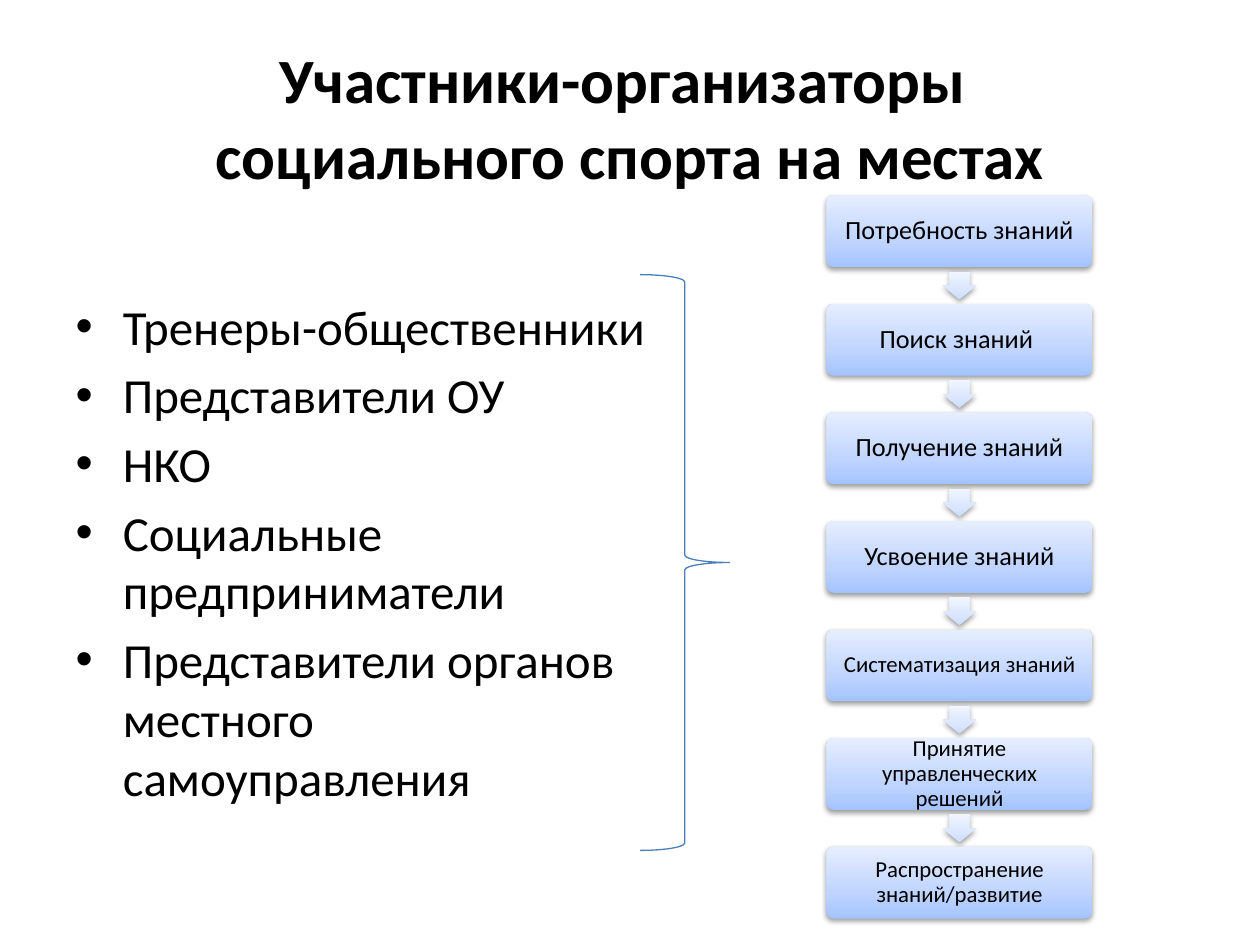
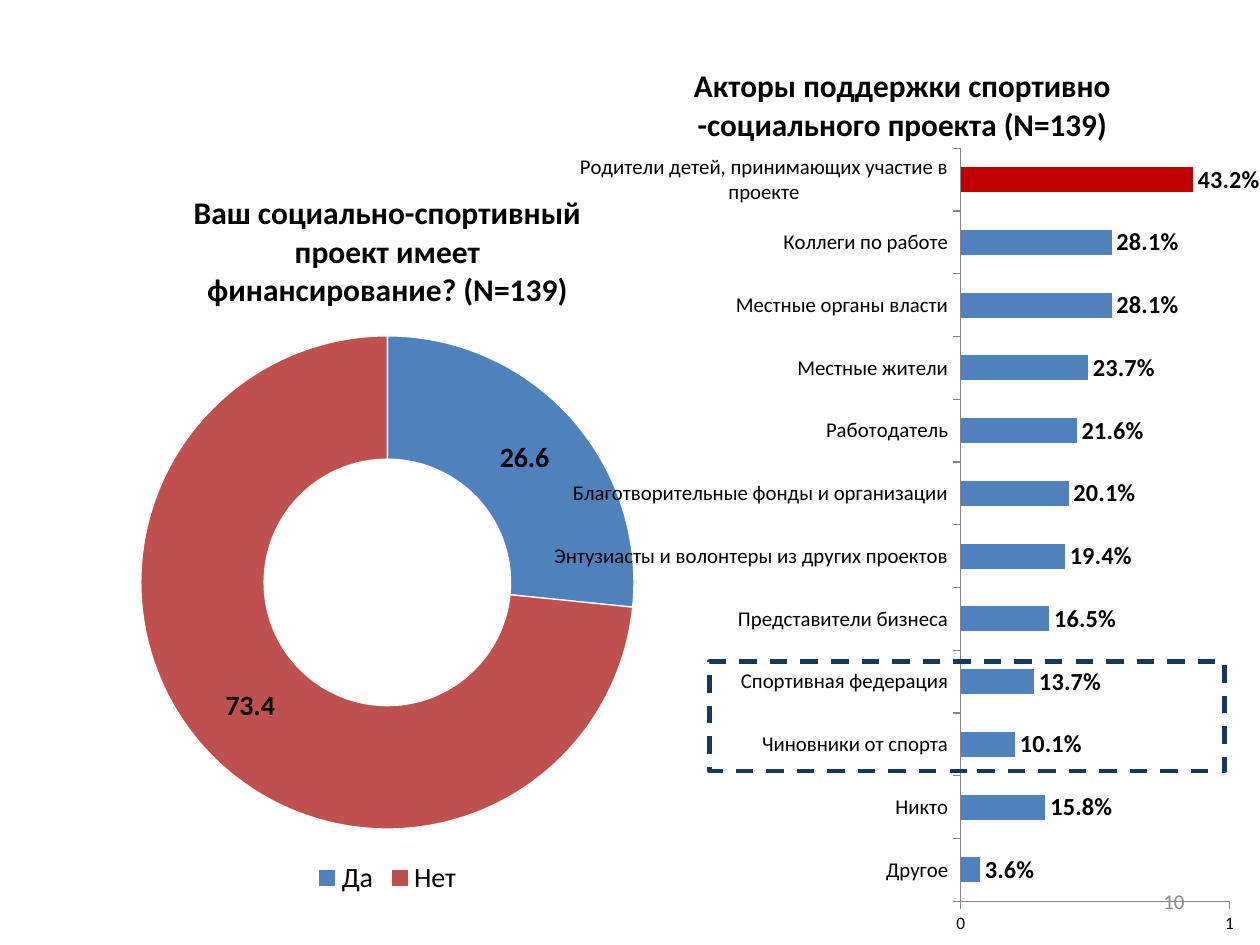
from dataclasses import dataclass

from lxml.etree import SubElement
from pptx import Presentation
from pptx.chart.data import CategoryChartData
from pptx.dml.color import RGBColor
from pptx.enum.chart import XL_CHART_TYPE, XL_LABEL_POSITION, XL_LEGEND_POSITION, XL_TICK_MARK
from pptx.enum.dml import MSO_LINE
from pptx.enum.shapes import MSO_SHAPE
from pptx.enum.text import MSO_ANCHOR, MSO_AUTO_SIZE, PP_ALIGN
from pptx.oxml.ns import qn
from pptx.util import Inches, Pt


@dataclass(frozen=True)
class Theme:
    font: str = "Calibri"
    text: str = "000000"
    muted: str = "8C8C8C"
    axis: str = "868686"
    paper: str = "FFFFFF"
    blue: str = "4F81BD"
    red: str = "C0504D"
    accent: str = "C00000"
    brace: str = "4B7EBC"
    frame: str = "17375E"
    step_fill: tuple = ((0, "A4C4FF"), (35, "BFD4FF"), (100, "E6EEFF"))
    arrow_fill: tuple = ((0, "CDDDFE"), (35, "DBE6FE"), (100, "F0F5FF"))
    title_size: int = 36
    body_size: int = 28
    chart_title_size: int = 18
    legend_size: int = 16
    step_size: int = 15
    long_step_size: int = 13
    label_size: int = 14
    small_size: int = 12
    axis_size: int = 10


THEME = Theme()

PARTICIPANTS = [
    "Тренеры-общественники",
    "Представители ОУ",
    "НКО",
    "Социальные предприниматели",
    "Представители органов местного самоуправления",
]
STEPS = [
    "Потребность знаний",
    "Поиск знаний ",
    "Получение знаний",
    "Усвоение знаний",
    "Систематизация знаний",
    "Принятие управленческих решений",
    "Распространение знаний/развитие",
]
FUNDING = {"Да": 26.6, "Нет": 73.4}
SUPPORTERS = {
    "Другое": 0.036,
    "Никто": 0.158,
    "Чиновники от спорта": 0.101,
    "Спортивная федерация": 0.137,
    "Представители бизнеса": 0.165,
    "Энтузиасты и волонтеры из других проектов": 0.194,
    "Благотворительные фонды и организации": 0.201,
    "Работодатель": 0.216,
    "Местные жители": 0.237,
    "Местные органы власти": 0.281,
    "Коллеги по работе": 0.281,
    "Родители детей, принимающих участие в проекте": 0.432,
}


# Shared helpers

def set_all(target, **formats):
    for name, value in formats.items():
        setattr(target, name, value)


def style_font(font, size, color=THEME.text, bold=False):
    set_all(font, name=THEME.font, size=Pt(size), bold=bold)
    font.color.rgb = RGBColor.from_string(color)


def paint(target_fill, color):
    target_fill.solid()
    target_fill.fore_color.rgb = RGBColor.from_string(color)


def draw_line(line, color, width):
    paint(line.fill, color)
    line.width = Pt(width)


def place(shape, box):
    for name, value in zip(("left", "top", "width", "height"), box):
        setattr(shape, name, Inches(value))


def add_plain_shape(slide, kind, box):
    shape = slide.shapes.add_shape(kind, *map(Inches, box))
    shape.shadow.inherit = False
    shape.fill.background()
    shape.line.fill.background()
    return shape


def add_glossy_shape(slide, kind, box, stops, adjustments):
    shape = add_plain_shape(slide, kind, box)
    for index, value in enumerate(adjustments):
        shape.adjustments[index] = value
    # Three-stop gradient, running upwards
    shape.fill.gradient()
    shape.fill.gradient_angle = 90
    properties = shape.element.spPr
    stop_list = properties.find(".//" + qn("a:gsLst"))
    for stop in list(stop_list):
        stop_list.remove(stop)
    for position, color in stops:
        stop = SubElement(stop_list, qn("a:gs"), pos=str(position * 1000))
        SubElement(stop, qn("a:srgbClr"), val=color)
    # Soft shadow below
    shadow = SubElement(properties.find(qn("a:effectLst")), qn("a:outerShdw"),
                        blurRad="40000", dist="20000", dir="5400000", rotWithShape="0")
    shadow_color = SubElement(shadow, qn("a:srgbClr"), val="000000")
    SubElement(shadow_color, qn("a:alpha"), val="38000")
    return shape


# Participants slide

def add_title(slide, text, box):
    title = slide.shapes.title
    place(title, box)
    frame = title.text_frame
    set_all(frame, text=text, vertical_anchor=MSO_ANCHOR.MIDDLE,
            auto_size=MSO_AUTO_SIZE.NONE)
    para = frame.paragraphs[0]
    para.alignment = PP_ALIGN.CENTER
    for span in para.runs:
        style_font(span.font, THEME.title_size, bold=True)


def add_bullets(slide, items, box):
    body = slide.placeholders[1]
    place(body, box)
    frame = body.text_frame
    set_all(frame, text="\n".join(items), auto_size=MSO_AUTO_SIZE.NONE)
    for para in frame.paragraphs:
        style_font(para.runs[0].font, THEME.body_size)


def add_step(slide, text, box):
    shape = add_glossy_shape(slide, MSO_SHAPE.ROUNDED_RECTANGLE, box, THEME.step_fill, [0.1])
    inset = Inches(0.06)
    frame = shape.text_frame
    set_all(frame, text=text, word_wrap=True, vertical_anchor=MSO_ANCHOR.MIDDLE,
            margin_left=inset, margin_right=inset, margin_top=inset, margin_bottom=inset)
    para = frame.paragraphs[0]
    set_all(para, alignment=PP_ALIGN.CENTER, line_spacing=0.9)
    size = THEME.long_step_size if len(text) > 20 else THEME.step_size
    style_font(para.runs[0].font, size)


def add_step_chain(slide, steps, box):
    left, top, width, height = box
    step_height, arrow_width, arrow_height = 0.57, 0.26, 0.22
    pitch = (height - step_height) / (len(steps) - 1)
    arrow_left = left + (width - arrow_width) / 2
    arrow_offset = (step_height + pitch - arrow_height) / 2
    for index, text in enumerate(steps):
        step_top = top + index * pitch
        add_step(slide, text, (left, step_top, width, step_height))
        if index < len(steps) - 1:
            add_glossy_shape(slide, MSO_SHAPE.DOWN_ARROW,
                             (arrow_left, step_top + arrow_offset, arrow_width, arrow_height),
                             THEME.arrow_fill, [0.6, 0.5])


def build_participants_slide(deck):
    slide = deck.slides.add_slide(deck.slide_layouts[1])
    add_title(slide, "Участники-организаторы \vсоциального спорта на местах", (0.5, 0.3, 9, 1.25))
    add_bullets(slide, PARTICIPANTS, (0.5, 2.3, 4.89, 4.4))
    add_step_chain(slide, STEPS, (6.56, 1.55, 2.11, 5.74))
    brace = add_plain_shape(slide, MSO_SHAPE.RIGHT_BRACE, (5.08, 2.18, 0.71, 4.57))
    draw_line(brace.line, THEME.brace, 0.75)


# Survey slide

def add_survey_chart(slide, kind, values, title, box):
    data = CategoryChartData()
    data.categories = list(values)
    data.add_series("Series 1", list(values.values()))
    chart = slide.shapes.add_chart(kind, *map(Inches, box), data).chart
    style_font(chart.font, THEME.axis_size)
    chart.has_title = True
    chart.has_legend = False
    frame = chart.chart_title.text_frame
    frame.text = title
    for para in frame.paragraphs:
        style_font(para.runs[0].font, THEME.chart_title_size, bold=True)
    return chart


def show_values(plot, number_format, size):
    plot.has_data_labels = True
    labels = plot.data_labels
    set_all(labels, show_value=True, show_percentage=False,
            number_format=number_format, number_format_is_linked=False)
    style_font(labels.font, size, bold=True)
    return labels


def add_funding_chart(slide, box):
    chart = add_survey_chart(slide, XL_CHART_TYPE.DOUGHNUT, FUNDING,
                             "Ваш социально-спортивный проект имеет финансирование? (N=139)", box)
    plot = chart.plots[0]
    plot.vary_by_categories = True
    show_values(plot, "###0.0", THEME.legend_size)
    for index, color in enumerate((THEME.blue, THEME.red)):
        slice_format = plot.series[0].points[index].format
        paint(slice_format.fill, color)
        draw_line(slice_format.line, THEME.paper, 0.75)
    chart.has_legend = True
    set_all(chart.legend, position=XL_LEGEND_POSITION.BOTTOM, include_in_layout=False)
    style_font(chart.legend.font, THEME.legend_size)


def set_plot_area(chart, box):
    plot_area = chart._chartSpace.chart.plotArea
    for old_layout in plot_area.findall(qn("c:layout")):
        plot_area.remove(old_layout)
    layout = SubElement(plot_area, qn("c:layout"))
    plot_area.insert(0, layout)
    manual = SubElement(layout, qn("c:manualLayout"))
    settings = {"layoutTarget": "inner", "xMode": "edge", "yMode": "edge",
                **dict(zip("xywh", box))}
    for name, value in settings.items():
        SubElement(manual, qn("c:" + name), val=str(value))


def add_supporters_chart(slide, box):
    chart = add_survey_chart(slide, XL_CHART_TYPE.BAR_CLUSTERED, SUPPORTERS,
                             "Акторы поддержки спортивно\n-социального проекта (N=139)", box)
    set_plot_area(chart, (0.583, 0.123, 0.382, 0.829))
    plot = chart.plots[0]
    set_all(plot, gap_width=150, vary_by_categories=False)
    labels = show_values(plot, "###0.0%", THEME.label_size)
    labels.position = XL_LABEL_POSITION.OUTSIDE_END
    # Bars, with the strongest one picked out
    series = plot.series[0]
    paint(series.format.fill, THEME.blue)
    paint(series.points[len(SUPPORTERS) - 1].format.fill, THEME.accent)
    # Axes
    set_all(chart.value_axis, minimum_scale=0, maximum_scale=0.5, major_unit=0.5)
    set_all(chart.value_axis.tick_labels, number_format="#,##0", number_format_is_linked=False)
    axis_sizes = ((chart.category_axis, THEME.small_size), (chart.value_axis, THEME.axis_size))
    for axis, size in axis_sizes:
        set_all(axis, has_major_gridlines=False, major_tick_mark=XL_TICK_MARK.OUTSIDE,
                minor_tick_mark=XL_TICK_MARK.NONE)
        draw_line(axis.format.line, THEME.axis, 0.75)
        style_font(axis.tick_labels.font, size)


def add_page_number(slide, number, box):
    frame = slide.shapes.add_textbox(*map(Inches, box)).text_frame
    set_all(frame, text=number, word_wrap=True, vertical_anchor=MSO_ANCHOR.MIDDLE)
    para = frame.paragraphs[0]
    para.alignment = PP_ALIGN.RIGHT
    style_font(para.runs[0].font, THEME.small_size, THEME.muted)


def build_survey_slide(deck):
    slide = deck.slides.add_slide(deck.slide_layouts[6])
    add_funding_chart(slide, (0.91, 1.3, 4.33, 5.85))
    add_supporters_chart(slide, (4.37, 0.29, 5.63, 7.21))
    sports_frame = add_plain_shape(slide, MSO_SHAPE.RECTANGLE, (5.63, 5.25, 4.09, 0.87))
    draw_line(sports_frame.line, THEME.frame, 2.5)
    sports_frame.line.dash_style = MSO_LINE.DASH
    add_page_number(slide, "10", (7.17, 6.95, 2.33, 0.4))


def main():
    deck = Presentation()
    set_all(deck, slide_width=Inches(10), slide_height=Inches(7.5))
    build_participants_slide(deck)
    build_survey_slide(deck)
    deck.save("out.pptx")


if __name__ == "__main__":
    main()
